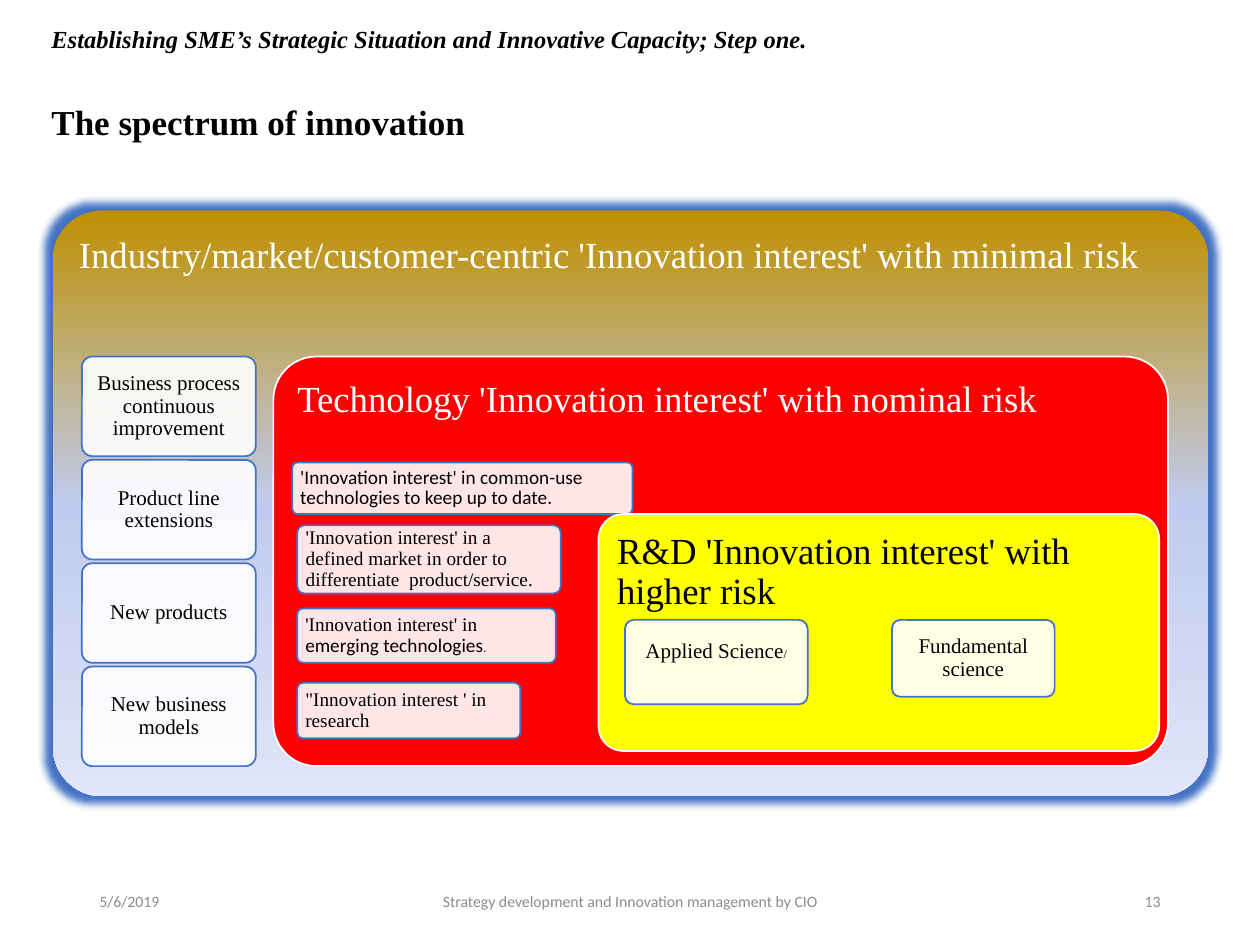
from dataclasses import dataclass

from lxml import etree
from pptx import Presentation
from pptx.dml.color import RGBColor
from pptx.enum.shapes import MSO_SHAPE
from pptx.enum.text import MSO_ANCHOR, PP_ALIGN
from pptx.oxml.ns import qn
from pptx.util import Emu, Pt

PX = 9144  # 100 px to the inch
ROUNDED = MSO_SHAPE.ROUNDED_RECTANGLE
LEFT, CENTER, RIGHT = PP_ALIGN.LEFT, PP_ALIGN.CENTER, PP_ALIGN.RIGHT
TOP, MIDDLE = MSO_ANCHOR.TOP, MSO_ANCHOR.MIDDLE
SERIF, SANS = "Times New Roman", "Calibri"
BLACK, WHITE, BLUE, GREY = "000000", "FFFFFF", "4472C4", "8C8C8C"
CARD_OPACITY = 90


@dataclass
class Span:
    text: str
    size: int
    font: str = SERIF
    color: str = BLACK
    bold: bool = False
    italic: bool = False


@dataclass
class Box:
    left: int
    top: int
    width: int
    height: int


@dataclass
class Panel:
    box: Box
    fill: str
    heading: Span
    rounding: float = 0.105


@dataclass
class Card:
    box: Box
    spans: list[Span]
    align: PP_ALIGN = CENTER
    lift: int = 0  # extra bottom margin that raises the text


def px(length: int) -> Emu:
    return Emu(length * PX)


def rgb(value: str) -> RGBColor:
    return RGBColor.from_string(value)


def place(box: Box) -> tuple[Emu, ...]:
    return px(box.left), px(box.top), px(box.width), px(box.height)


def write(paragraph, spans: list[Span], align: PP_ALIGN = LEFT, spacing: float = 0.9) -> None:
    paragraph.alignment = align
    paragraph.line_spacing = spacing
    for span in spans:
        run = paragraph.add_run()
        run.text = span.text
        run.font.size = Pt(span.size)
        run.font.name = span.font
        run.font.color.rgb = rgb(span.color)
        run.font.bold = span.bold
        run.font.italic = span.italic


def set_frame(frame, anchor: MSO_ANCHOR, margin: int, lift: int = 0) -> None:
    frame.word_wrap = True
    frame.vertical_anchor = anchor
    frame.margin_left = frame.margin_right = frame.margin_top = px(margin)
    frame.margin_bottom = px(margin + lift)


def add_rounded(slide, box: Box, fill: str, line: str, rounding: float):
    shape = slide.shapes.add_shape(ROUNDED, *place(box))
    shape.adjustments[0] = rounding
    shape.shadow.inherit = False
    shape.fill.solid()
    shape.fill.fore_color.rgb = rgb(fill)
    shape.line.color.rgb = rgb(line)
    shape.line.width = Pt(1)
    return shape


def add_opacity(color, percent: int) -> None:
    etree.SubElement(color, qn("a:alpha"), val=str(percent * 1000))


def add_panel(slide, panel: Panel):
    shape = add_rounded(slide, panel.box, panel.fill, WHITE, panel.rounding)
    set_frame(shape.text_frame, TOP, 9)
    write(shape.text_frame.paragraphs[0], [panel.heading])
    return shape


def add_card(slide, card: Card) -> None:
    shape = add_rounded(slide, card.box, WHITE, BLUE, 0.105)
    add_opacity(shape.fill._xPr.find(qn("a:solidFill"))[0], CARD_OPACITY)
    set_frame(shape.text_frame, MIDDLE, 5, card.lift)
    write(shape.text_frame.paragraphs[0], card.spans, card.align)


def shade_with_glow(shape, stops: list[tuple[int, str]], glow: str, radius: int) -> None:
    """Give the shape a downward gradient and a glow in place of its outline."""
    shape.line.fill.background()
    shape.fill.gradient()
    shape.fill.gradient_angle = 270
    properties = shape.element.spPr
    stop_list = properties.find(qn("a:gradFill")).find(qn("a:gsLst"))
    stop_list.clear()
    for position, color in stops:
        stop = etree.SubElement(stop_list, qn("a:gs"), pos=str(position * 1000))
        etree.SubElement(stop, qn("a:srgbClr"), val=color)
    halo = etree.SubElement(properties.find(qn("a:effectLst")), qn("a:glow"), rad=str(px(radius)))
    etree.SubElement(halo, qn("a:srgbClr"), val=glow)


def add_label(slide, box: Box, span: Span, align: PP_ALIGN) -> None:
    frame = slide.shapes.add_textbox(*place(box)).text_frame
    set_frame(frame, MIDDLE, 5)
    frame.margin_left = frame.margin_right = px(10)
    write(frame.paragraphs[0], [span], align, 1.0)


def add_title(slide) -> None:
    frame = slide.shapes.add_textbox(*place(Box(31, 10, 900, 115))).text_frame
    set_frame(frame, MIDDLE, 5)
    frame.margin_left = frame.margin_right = px(10)
    write(frame.paragraphs[0], [Span(
        "Establishing SME’s Strategic Situation and Innovative Capacity; Step one.",
        14, bold=True, italic=True)])
    topic = frame.add_paragraph()
    topic.space_before = Pt(29)
    write(topic, [Span("The spectrum of innovation", 20, bold=True)])


MARKET = Panel(Box(42, 167, 917, 465), "BF9000", Span(
    "Industry/market/customer-centric 'Innovation interest' with minimal risk", 21, color=WHITE), 0.085)
MARKET_STOPS = [(0, "BF9000"), (50, "C0CBF0"), (100, "E0E5F7")]
TECHNOLOGY = Panel(Box(217, 283, 710, 325), "FF0000", Span(
    "Technology 'Innovation interest' with nominal risk", 21, color=WHITE))
RESEARCH = Panel(Box(475, 408, 445, 188), "FFFF00", Span(
    "R&D 'Innovation interest' with higher risk", 21))

MARKET_TOPICS = ["Business process continuous improvement", "Product line extensions",
                 "New products", "New business models"]
MARKET_CARDS = [Card(Box(65, 283 + 82 * row, 138, 79), [Span(topic, 12)])
                for row, topic in enumerate(MARKET_TOPICS)]
TECHNOLOGY_CARDS = [
    Card(Box(232, 367, 270, 41), [
        Span("'Innovation interest' in com", 11, SANS), Span("m", 11),
        Span("on-use technologies to keep up to date.", 11, SANS)], LEFT),
    Card(Box(236, 417, 209, 54), [Span(
        "'Innovation interest' in a defined market in order to differentiate  product/service.", 11)], LEFT),
    Card(Box(236, 483, 205, 43), [
        Span("'Innovation interest' in", 11), Span(" emerging technologies", 11, SANS),
        Span(".", 7, SANS)], LEFT),
    Card(Box(236, 542, 177, 44), [Span("\"Innovation interest ' in research", 11)], LEFT),
]
RESEARCH_CARDS = [
    Card(Box(496, 492, 145, 67), [Span("Applied Science", 12), Span("/", 7)], lift=17),
    Card(Box(708, 492, 129, 61), [Span("Fundamental science", 12)]),
]
FOOTER = [
    (Box(69, 695, 225, 40), "5/6/2019", LEFT),
    (Box(331, 695, 338, 40), "Strategy development and Innovation management by CIO", CENTER),
    (Box(706, 695, 225, 40), "13", RIGHT),
]


def main() -> None:
    deck = Presentation()
    deck.slide_width, deck.slide_height = px(1000), px(750)
    slide = deck.slides.add_slide(deck.slide_layouts[6])
    add_title(slide)
    for panel, cards in ((MARKET, MARKET_CARDS), (TECHNOLOGY, TECHNOLOGY_CARDS),
                         (RESEARCH, RESEARCH_CARDS)):
        shape = add_panel(slide, panel)
        if panel is MARKET:
            shade_with_glow(shape, MARKET_STOPS, BLUE, 11)
        for card in cards:
            add_card(slide, card)
    for box, text, align in FOOTER:
        add_label(slide, box, Span(text, 9, SANS, GREY), align)
    deck.save("out.pptx")


if __name__ == "__main__":
    main()
